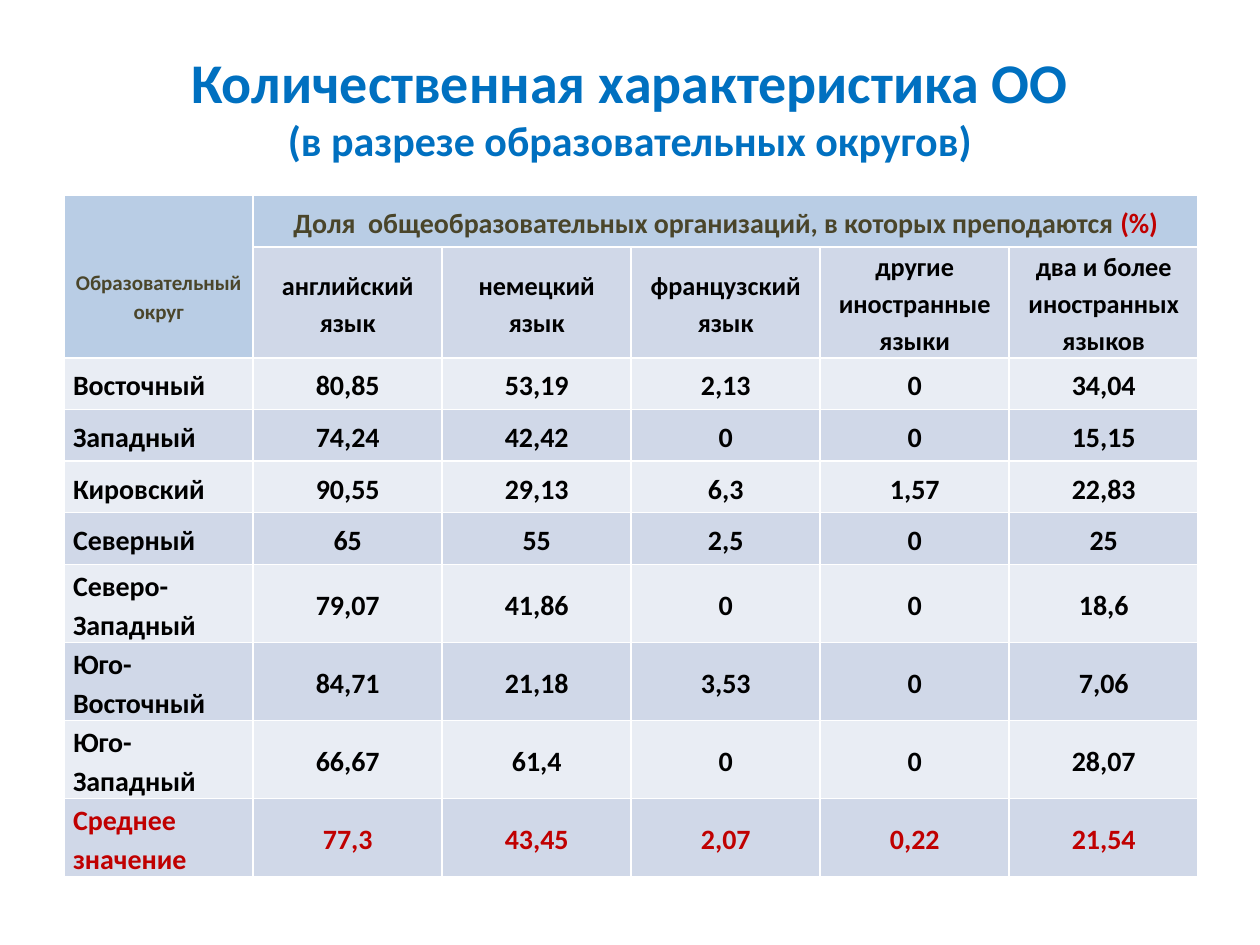
from pptx import Presentation
from pptx.dml.color import RGBColor
from pptx.enum.text import MSO_ANCHOR, PP_ALIGN
from pptx.util import Inches, Pt

MIDDLE = MSO_ANCHOR.MIDDLE
CENTER, JUSTIFY = PP_ALIGN.CENTER, PP_ALIGN.JUSTIFY

BLUE = RGBColor(0x00, 0x70, 0xC0)
OLIVE = RGBColor(0x4A, 0x45, 0x2A)
RED = RGBColor(0xC0, 0x00, 0x00)
BLACK = RGBColor(0x00, 0x00, 0x00)
HEAD = RGBColor(0xB9, 0xCD, 0xE5)
BANDS = (RGBColor(0xE9, 0xED, 0xF4), RGBColor(0xD0, 0xD8, 0xE8))

TITLE = [("Количественная характеристика ОО", 32),
         ("(в разрезе образовательных округов)", 24)]
CORNER = "Образовательный округ"
SHARE = [("Доля  общеобразовательных организаций, в которых преподаются ", OLIVE),
         ("(%)", RED)]
LANGS = ["английский язык", "немецкий язык", "французский язык",
         "другие иностранные языки", "два и более иностранных языков"]
ROWS = [
    ("Восточный", "80,85", "53,19", "2,13", "0", "34,04"),
    ("Западный", "74,24", "42,42", "0", "0", "15,15"),
    ("Кировский", "90,55", "29,13", "6,3", "1,57", "22,83"),
    ("Северный", "65", "55", "2,5", "0", "25"),
    ("Северо-Западный", "79,07", "41,86", "0", "0", "18,6"),
    ("Юго-Восточный", "84,71", "21,18", "3,53", "0", "7,06"),
    ("Юго-Западный", "66,67", "61,4", "0", "0", "28,07"),
    ("Среднее значение", "77,3", "43,45", "2,07", "0,22", "21,54"),
]
HEIGHTS = [0.41, 0.88] + [0.41] * 4 + [0.62] * 4
COL = 1.5
CELL = {"vertical_anchor": MIDDLE, "margin_left": Inches(0.07),
        "margin_right": Inches(0.07), "margin_top": 0, "margin_bottom": 0}


def add_run(para, text, size, color):
    run = para.add_run()
    run.text = text
    form = {"name": "Calibri", "size": Pt(size), "bold": True}
    for key, value in form.items():
        setattr(run.font, key, value)
    run.font.color.rgb = color


def fill_cell(cell, runs, size, fill, align=CENTER):
    for key, value in CELL.items():
        setattr(cell, key, value)
    cell.fill.solid()
    cell.fill.fore_color.rgb = fill
    para = cell.text_frame.paragraphs[0]
    para.alignment = align
    para.line_spacing = 1.15
    for text, color in runs:
        add_run(para, text, size, color)


def add_title(slide):
    box = slide.shapes.add_textbox(Inches(0.5), Inches(0.3), Inches(9), Inches(1.09))
    frame = box.text_frame
    frame.word_wrap = True
    frame.vertical_anchor = MIDDLE
    para = frame.paragraphs[0]
    para.alignment = CENTER
    for i, (text, size) in enumerate(TITLE):
        if i:
            para.add_line_break()
        add_run(para, text, size, BLUE)


def add_grid(slide):
    cols = len(LANGS) + 1
    grid = slide.shapes.add_table(
        len(HEIGHTS), cols, Inches(0.51), Inches(1.55),
        Inches(COL * cols), Inches(sum(HEIGHTS))).table
    for col in grid.columns:
        col.width = Inches(COL)
    for row, height in zip(grid.rows, HEIGHTS):
        row.height = Inches(height)

    corner = grid.cell(0, 0)
    corner.merge(grid.cell(1, 0))
    fill_cell(corner, [(CORNER, OLIVE)], 12, HEAD)
    corner.margin_top = Inches(0.31)
    grid.cell(0, 1).merge(grid.cell(0, cols - 1))
    fill_cell(grid.cell(0, 1), SHARE, 16, HEAD)
    for c, lang in enumerate(LANGS, 1):
        fill_cell(grid.cell(1, c), [(lang, BLACK)], 15, BANDS[1])

    for r, row in enumerate(ROWS):
        color = RED if row is ROWS[-1] else BLACK
        for c, text in enumerate(row):
            fill_cell(grid.cell(r + 2, c), [(text, color)], 16, BANDS[r % 2],
                      CENTER if c else JUSTIFY)


def main():
    deck = Presentation()
    deck.slide_width, deck.slide_height = Inches(10), Inches(7.5)
    slide = deck.slides.add_slide(deck.slide_layouts[6])
    add_title(slide)
    add_grid(slide)
    deck.save("out.pptx")


if __name__ == "__main__":
    main()
